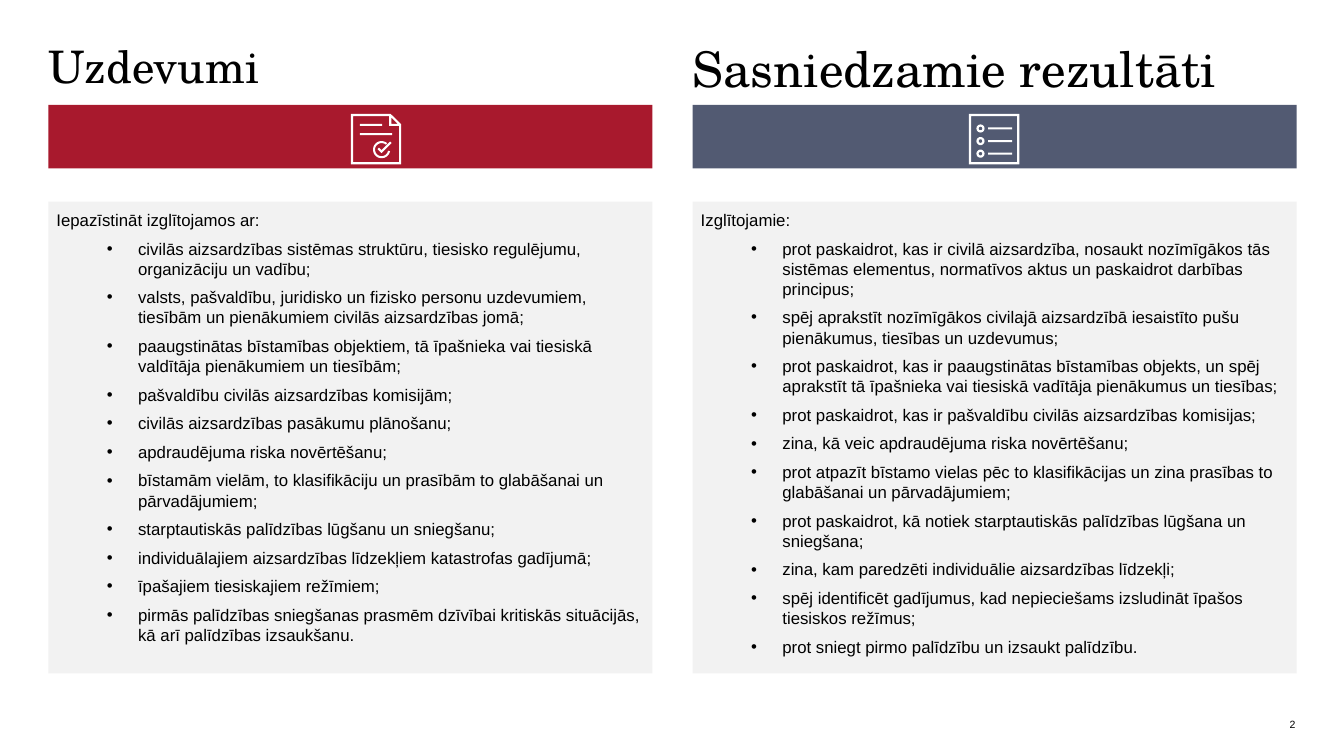
from dataclasses import dataclass
from math import cos, radians, sin

from pptx import Presentation
from pptx import util as u
from pptx.dml.color import RGBColor
from pptx.enum import shapes, text
from pptx.oxml import parse_xml
from pptx.oxml.ns import nsdecls

SERIF, SANS = "TeX Gyre Schola", "Arial"
BLACK, WHITE, PALE = "000000", "FFFFFF", "F2F2F2"
LEFT_COLUMN, RIGHT_COLUMN, COLUMN_WIDTH = 0.48, 6.87, 5.99
HEADING_ROW, BAND_ROW, PANEL_ROW, NUMBER_ROW = (0.47, 1.52), (1.04, 0.63), (2, 4.68), (7.1, 0.15)
ICON_TOP = 1.13

Point = tuple[float, float]
Contour = list[Point]


@dataclass
class Column:
    left: float
    heading: str
    heading_size: float
    color: str
    icon_left: float
    icon: list[Contour]
    intro: str
    bullets: list[str]


def rgb(color: str) -> RGBColor:
    return RGBColor.from_string(color)


def bar(left: float, top: float, right: float, bottom: float) -> Contour:
    return [(left, top), (right, top), (right, bottom), (left, bottom)]


def arc(x: float, y: float, radius: float, start: float = 0, sweep: float = 360) -> Contour:
    """Points along a circle; angles are in degrees, clockwise from the right."""
    angles = [radians(start + sweep * step / 24) for step in range(25)]
    return [(x + radius * cos(a), y + radius * sin(a)) for a in angles]


def checklist_icon() -> list[Contour]:
    """Contours in hundredths of an inch, as for every icon."""
    contours = [bar(0, 0, 50, 50), bar(2.2, 2.2, 47.8, 47.8)]
    for y in (14.5, 27, 39.5):
        contours += [arc(11.5, y, 4), arc(11.5, y, 1.8), bar(19, y - 1, 43, y + 1)]
    return contours


def document_icon() -> list[Contour]:
    open_ring = arc(30.5, 35.5, 8.5, -50, -300) + arc(30.5, 35.5, 6.5, -50, -300)[::-1]
    return [
        [(0, 0), (39.5, 0), (50, 10.5), (50, 50), (0, 50)],
        [(2.2, 2.2), (38, 2.2), (38, 12), (47.8, 12), (47.8, 47.8), (2.2, 47.8)],
        [(40.2, 3.5), (40.2, 10), (46.7, 10)],
        bar(9, 10, 31, 12),
        bar(9, 19, 41, 21),
        [(30.5, 36), (39, 27.5), (40.5, 29), (30.5, 39), (26.5, 35), (28, 33.5)],
        open_ring,
    ]


def draw_icon(page, column: Column) -> None:
    """Draw the icon on a grid of thousandths of an inch, which keeps its curves round."""
    first, *others = [[(10 * x, 10 * y) for x, y in contour] for contour in column.icon]
    builder = page.shapes.build_freeform(*first[0], scale=u.Inches(0.001))
    builder.add_line_segments(first[1:])
    for contour in others:
        builder.move_to(*contour[0])
        builder.add_line_segments(contour[1:])
    icon = builder.convert_to_shape(u.Inches(column.icon_left), u.Inches(ICON_TOP))
    paint(icon, WHITE)


def paint(shape, color: str) -> None:
    shape.shadow.inherit = False
    shape.fill.solid()
    shape.fill.fore_color.rgb = rgb(color)
    shape.line.fill.background()


def place(shape, left: float, row: Point, width: float = COLUMN_WIDTH) -> None:
    shape.left, shape.top = u.Inches(left), u.Inches(row[0])
    shape.width, shape.height = u.Inches(width), u.Inches(row[1])


def rectangle(page, left: float, row: Point, color: str):
    box = page.shapes.add_shape(shapes.MSO_SHAPE.RECTANGLE, 0, 0, 0, 0)
    place(box, left, row)
    paint(box, color)
    return box


def set_frame(box, inset: float, anchor=text.MSO_ANCHOR.TOP):
    frame = box.text_frame
    frame.word_wrap = True
    frame.auto_size = text.MSO_AUTO_SIZE.NONE
    frame.vertical_anchor = anchor
    frame.margin_left = frame.margin_right = u.Inches(inset)
    frame.margin_top = frame.margin_bottom = u.Inches(inset)
    return frame


def format_para(para, size: float, font: str, spacing: float, align=text.PP_ALIGN.LEFT) -> None:
    para.alignment = align
    para.line_spacing = spacing
    para.space_before = u.Pt(0)
    for span in para.runs:
        span.font.size = u.Pt(size)
        span.font.name = font
        span.font.color.rgb = rgb(BLACK)


def add_bullet(para) -> None:
    properties = para._p.get_or_add_pPr()
    properties.set("marL", str(u.Inches(0.81)))
    properties.set("indent", str(u.Inches(-0.31)))
    properties.append(parse_xml(f'<a:buFont {nsdecls("a")} typeface="Arial"/>'))
    properties.append(parse_xml(f'<a:buChar {nsdecls("a")} char="•"/>'))


def draw_heading(box, column: Column) -> None:
    place(box, column.left, HEADING_ROW)
    frame = set_frame(box, 0)
    frame.text = column.heading
    format_para(frame.paragraphs[0], column.heading_size, SERIF, 0.85)


def draw_panel(page, column: Column) -> None:
    frame = set_frame(rectangle(page, column.left, PANEL_ROW, PALE), 0.08)
    frame.text = "\n".join([column.intro, *column.bullets])
    for index, para in enumerate(frame.paragraphs):
        if index:
            add_bullet(para)
        format_para(para, 12, SANS, 1.0)
        para.space_after = u.Pt(6)


def draw_page_number(page) -> None:
    box = page.shapes.add_textbox(0, 0, 0, 0)
    place(box, 10.92, NUMBER_ROW, 1.93)
    frame = set_frame(box, 0, text.MSO_ANCHOR.BOTTOM)
    frame.text = "2"
    format_para(frame.paragraphs[0], 7.5, SANS, 1.0, text.PP_ALIGN.RIGHT)


COLUMNS = [
    Column(LEFT_COLUMN, "Uzdevumi", 32, "A8192D", 3.48, document_icon(), "Iepazīstināt izglītojamos ar:", [
        "civilās aizsardzības sistēmas struktūru, tiesisko regulējumu, organizāciju un vadību;",
        "valsts, pašvaldību, juridisko un fizisko personu uzdevumiem, tiesībām un pienākumiem civilās aizsardzības jomā;",
        "paaugstinātas bīstamības objektiem, tā īpašnieka vai tiesiskā valdītāja pienākumiem un tiesībām;",
        "pašvaldību civilās aizsardzības komisijām;",
        "civilās aizsardzības pasākumu plānošanu;",
        "apdraudējuma riska novērtēšanu;",
        "bīstamām vielām, to klasifikāciju un prasībām to glabāšanai un pārvadājumiem;",
        "starptautiskās palīdzības lūgšanu un sniegšanu;",
        "individuālajiem aizsardzības līdzekļiem katastrofas gadījumā;",
        "īpašajiem tiesiskajiem režīmiem;",
        "pirmās palīdzības sniegšanas prasmēm dzīvībai kritiskās situācijās, kā arī palīdzības izsaukšanu.",
    ]),
    Column(RIGHT_COLUMN, "Sasniedzamie rezultāti", 35.1, "525A72", 9.61, checklist_icon(), "Izglītojamie:", [
        "prot paskaidrot, kas ir civilā aizsardzība, nosaukt nozīmīgākos tās sistēmas elementus, normatīvos aktus un paskaidrot darbības principus;",
        "spēj aprakstīt nozīmīgākos civilajā aizsardzībā iesaistīto pušu pienākumus, tiesības un uzdevumus;",
        "prot paskaidrot, kas ir paaugstinātas bīstamības objekts, un spēj aprakstīt tā īpašnieka vai tiesiskā vadītāja pienākumus un tiesības;",
        "prot paskaidrot, kas ir pašvaldību civilās aizsardzības komisijas;",
        "zina, kā veic apdraudējuma riska novērtēšanu;",
        "prot atpazīt bīstamo vielas pēc to klasifikācijas un zina prasības to glabāšanai un pārvadājumiem;",
        "prot paskaidrot, kā notiek starptautiskās palīdzības lūgšana un sniegšana;",
        "zina, kam paredzēti individuālie aizsardzības līdzekļi;",
        "spēj identificēt gadījumus, kad nepieciešams izsludināt īpašos tiesiskos režīmus;",
        "prot sniegt pirmo palīdzību un izsaukt palīdzību.",
    ]),
]


def main() -> None:
    deck = Presentation()
    deck.slide_width, deck.slide_height = u.Inches(13.33), u.Inches(7.5)
    page = deck.slides.add_slide(deck.slide_layouts[5])
    headings = [page.shapes.title, page.shapes.add_textbox(0, 0, 0, 0)]
    for heading, column in zip(headings, COLUMNS):
        draw_heading(heading, column)
        draw_panel(page, column)
        rectangle(page, column.left, BAND_ROW, column.color)
        draw_icon(page, column)
    draw_page_number(page)
    deck.save("out.pptx")


if __name__ == "__main__":
    main()
